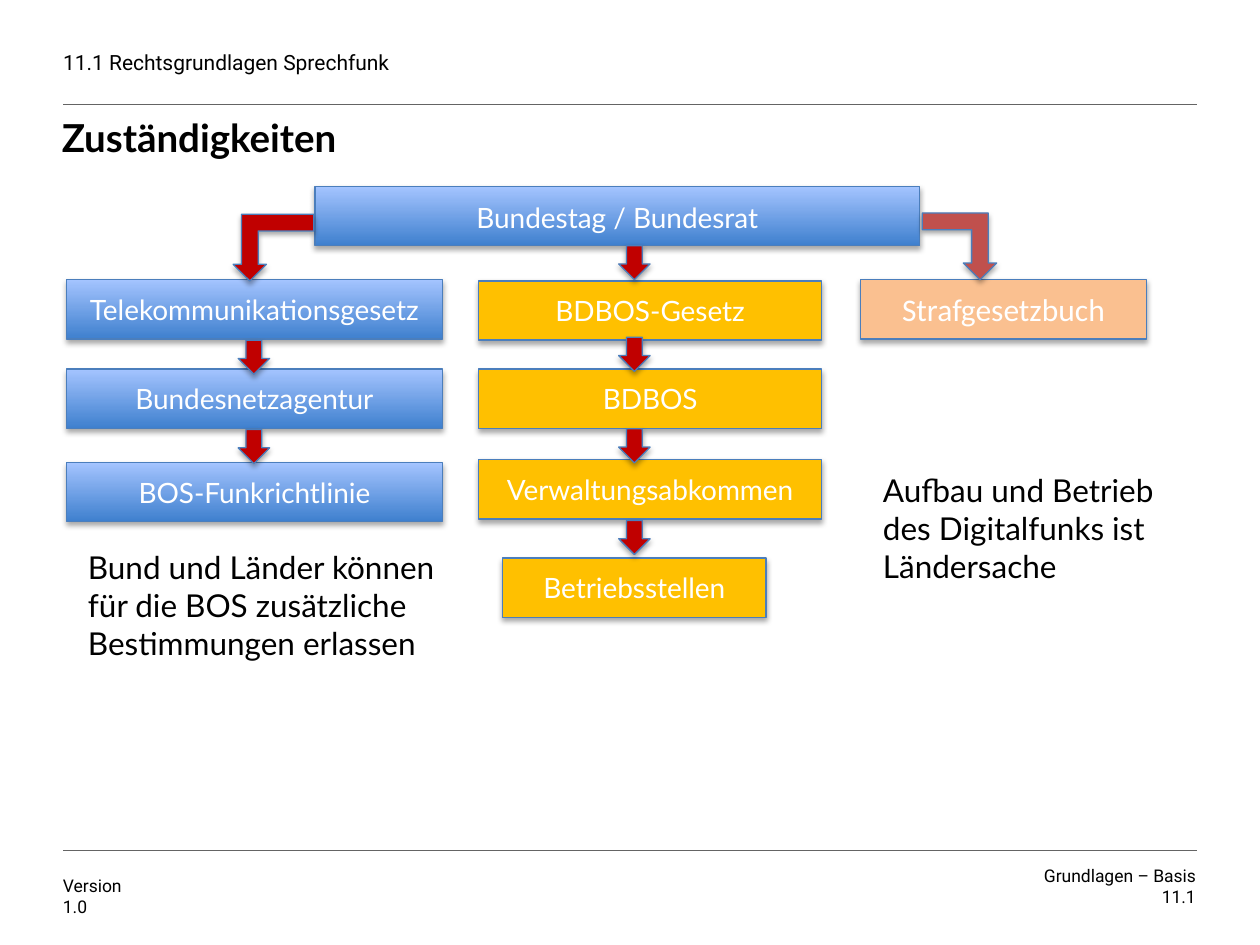
from lxml import etree
from pptx import Presentation
from pptx.dml.color import RGBColor
from pptx.enum.shapes import MSO_CONNECTOR, MSO_SHAPE
from pptx.enum.text import MSO_ANCHOR, MSO_AUTO_SIZE, PP_ALIGN
from pptx.oxml.ns import qn
from pptx.util import Inches, Pt

RECTANGLE, DOWN_ARROW, BENT_ARROW = MSO_SHAPE.RECTANGLE, MSO_SHAPE.DOWN_ARROW, MSO_SHAPE.BENT_UP_ARROW
STRAIGHT = MSO_CONNECTOR.STRAIGHT
TOP, MIDDLE = MSO_ANCHOR.TOP, MSO_ANCHOR.MIDDLE
LEFT, CENTER, RIGHT = PP_ALIGN.LEFT, PP_ALIGN.CENTER, PP_ALIGN.RIGHT
GROW = MSO_AUTO_SIZE.SHAPE_TO_FIT_TEXT

BLACK = RGBColor(0x00, 0x00, 0x00)
WHITE = RGBColor(0xFF, 0xFF, 0xFF)
GREY = RGBColor(0x64, 0x64, 0x64)
OUTLINE = RGBColor(0x4B, 0x7E, 0xBC)
DEEP_BLUE = RGBColor(0x3F, 0x80, 0xCE)
LIGHT_BLUE = RGBColor(0xA4, 0xC4, 0xFF)
AMBER = RGBColor(0xFF, 0xC0, 0x00)
PEACH = RGBColor(0xFA, 0xC0, 0x90)
RED = RGBColor(0xC0, 0x00, 0x00)
BRICK = RGBColor(0xC0, 0x50, 0x4D)
BLUE_GRADIENT = (DEEP_BLUE, LIGHT_BLUE)

COLUMNS, ROWS = 100, 75
CELL = Inches(0.1)
BOX_ROWS = 4.7
ARROW_COLUMNS, ARROW_ROWS = 2.5, 2.7

SMALL = {"name": "Roboto", "size": Pt(10)}
HEADER = {"name": "Roboto", "size": Pt(12)}
TITLE = {"name": "Lato", "size": Pt(22), "bold": True}
LABEL = {"name": "Lato", "size": Pt(16)}
WIDE_LABEL = {"name": "Calibri", "size": Pt(18)}
NOTE = {"name": "Lato", "size": Pt(18)}


def cells(*counts):
    """Turn counts of grid cells into lengths."""
    return [int(count * CELL) for count in counts]


def set_values(target, values):
    """Set each attribute of the target from a dict."""
    for name, value in values.items():
        setattr(target, name, value)


def write(shape, paragraphs, color, alignment=LEFT, anchor=MIDDLE, inset=None):
    """Write paragraphs, each a list of (text, font values) runs."""
    frame = shape.text_frame
    set_values(frame, {"word_wrap": True, "vertical_anchor": anchor})
    if inset is not None:
        sides = ("margin_left", "margin_top", "margin_right", "margin_bottom")
        set_values(frame, dict.fromkeys(sides, inset))
    for index, runs in enumerate(paragraphs):
        paragraph = frame.add_paragraph() if index else frame.paragraphs[0]
        paragraph.alignment = alignment
        for text, values in runs:
            run = paragraph.add_run()
            run.text = text
            set_values(run.font, values)
            run.font.color.rgb = color
    return frame


def add_text(slide, box, paragraphs, **options):
    """Add a black text box."""
    return write(slide.shapes.add_textbox(*cells(*box)), paragraphs, BLACK, **options)


def add_rule(slide, row):
    """Draw a thin grey rule between the side margins."""
    rule = slide.shapes.add_connector(STRAIGHT, *cells(5, row, COLUMNS - 5, row))
    rule.line.color.rgb = GREY
    rule.line.width = Pt(0.25)
    etree.SubElement(rule._element.spPr, qn("a:effectLst"))


def add_shadow(shape):
    """Give the shape a soft shadow straight below it."""
    shape.shadow.inherit = False
    effects = shape._element.spPr.find(qn("a:effectLst"))
    shadow = etree.SubElement(effects, qn("a:outerShdw"), blurRad=str(Pt(3.1)),
                              dist=str(Pt(1.8)), dir="5400000", rotWithShape="0")
    color = etree.SubElement(shadow, qn("a:srgbClr"), val=str(BLACK))
    etree.SubElement(color, qn("a:alpha"), val="35000")


def add_block(slide, kind, box, fill):
    """Add an outlined, shadowed shape with a plain or gradient fill."""
    shape = slide.shapes.add_shape(kind, *cells(*box))
    if fill is BLUE_GRADIENT:
        shape.fill.gradient()
        shape.fill.gradient_angle = 90
        for stop, color in zip(shape.fill.gradient_stops, fill):
            stop.color.rgb = color
    else:
        shape.fill.solid()
        shape.fill.fore_color.rgb = fill
    shape.line.color.rgb = OUTLINE
    shape.line.width = Pt(0.75)
    add_shadow(shape)
    return shape


def add_authority(slide, box, fill, runs):
    """Add a labelled box of the chart."""
    write(add_block(slide, RECTANGLE, box, fill), [runs], WHITE, alignment=CENTER)


def add_column(slide, box, fill, labels, font=LABEL):
    """Stack equally wide boxes at the given (row, label) pairs below the box's top."""
    left, top, width = box
    for row, label in labels:
        add_authority(slide, (left, top + row, width, BOX_ROWS), fill, [(label, font)])


def add_down_arrows(slide, axis, rows):
    """Add red arrows centred on a vertical axis."""
    for row in rows:
        box = (axis - ARROW_COLUMNS / 2, row, ARROW_COLUMNS, ARROW_ROWS)
        add_block(slide, DOWN_ARROW, box, RED)


def add_bent_arrow(slide, box, fill, to_right=False):
    """Add an arrow that leaves sideways and turns down."""
    arrow = add_block(slide, BENT_ARROW, box, fill)
    arrow.rotation = 180
    if to_right:
        arrow._element.spPr.xfrm.set("flipH", "1")


def add_frame(slide):
    """Add the header, the footer and their rules."""
    add_rule(slide, 8.3)
    add_text(slide, (5, 3.3, 60.8, 3.3), [[("11.1 Rechtsgrundlagen Sprechfunk", HEADER)]], inset=0)
    add_rule(slide, ROWS - 7.5)
    add_text(slide, (5, 68.9, 5.6, 4.4), [[("Version", SMALL)], [("1.0", SMALL)]], inset=0)
    course = add_text(slide, (80.7, 68.9, 14.2, 4.4), [[("Grundlagen – Basis 11.1", SMALL)]],
                      alignment=RIGHT, inset=0)
    course.margin_bottom = int(1.6 * CELL)


def add_title(slide, box):
    """Place and format the title."""
    title = slide.shapes.title
    set_values(title, dict(zip(("left", "top", "width", "height"), cells(*box))))
    frame = write(title, [[("Zuständigkeiten", TITLE)]], BLACK, anchor=TOP, inset=0)
    frame.paragraphs[0].line_spacing = Pt(24)


def add_chart_of_authorities(slide, top):
    """Draw the boxes and arrows below the given row."""
    add_authority(slide, (25, top, 48, BOX_ROWS), BLUE_GRADIENT,
                  [("Bundestag", LABEL), (" ", WIDE_LABEL), ("/ Bundesrat", LABEL)])
    add_column(slide, (5.3, top, 29.8), BLUE_GRADIENT,
               [(7.4, "Telekommunikationsgesetz"), (14.5, "Bundesnetzagentur"),
                (21.9, "BOS-Funkrichtlinie")])
    add_column(slide, (38, top, 27.2), AMBER,
               [(7.5, "BDBOS-Gesetz"), (14.5, "BDBOS"), (21.7, "Verwaltungsabkommen")])
    add_column(slide, (39.9, top, 20.9), AMBER, [(29.5, "Betriebsstellen")])
    add_column(slide, (68.3, top, 22.7), PEACH, [(7.4, "Strafgesetzbuch")], WIDE_LABEL)
    add_down_arrows(slide, 50.35, [top + BOX_ROWS + 7.27 * step for step in range(4)])
    add_down_arrows(slide, 20.15, [top + 12.2, top + 19.3])
    add_bent_arrow(slide, (18.5, top + 2.2, 6.4, 5.3), RED)
    add_bent_arrow(slide, (73.2, top + 2.1, 5.9, 5.3), BRICK, to_right=True)


def add_notes_beside_chart(slide):
    """Add the two remarks on the role of the states."""
    remarks = [
        ((69.1, 36.9, 25.7, 10.1), "Aufbau und Betrieb des Digitalfunks ist Ländersache"),
        ((6, 43, 29.7, 10.1),
         "Bund und Länder können für die BOS zusätzliche Bestimmungen erlassen"),
    ]
    for box, text in remarks:
        add_text(slide, box, [[(text, NOTE)]], anchor=TOP).auto_size = GROW


def main():
    """Build the slide and save it."""
    presentation = Presentation()
    presentation.slide_width, presentation.slide_height = cells(COLUMNS, ROWS)
    slide = presentation.slides.add_slide(presentation.slide_layouts[5])
    add_frame(slide)
    add_title(slide, (4.9, 9.4, 71.7, 6.7))
    add_chart_of_authorities(slide, 14.8)
    add_notes_beside_chart(slide)
    presentation.save("out.pptx")


if __name__ == "__main__":
    main()
